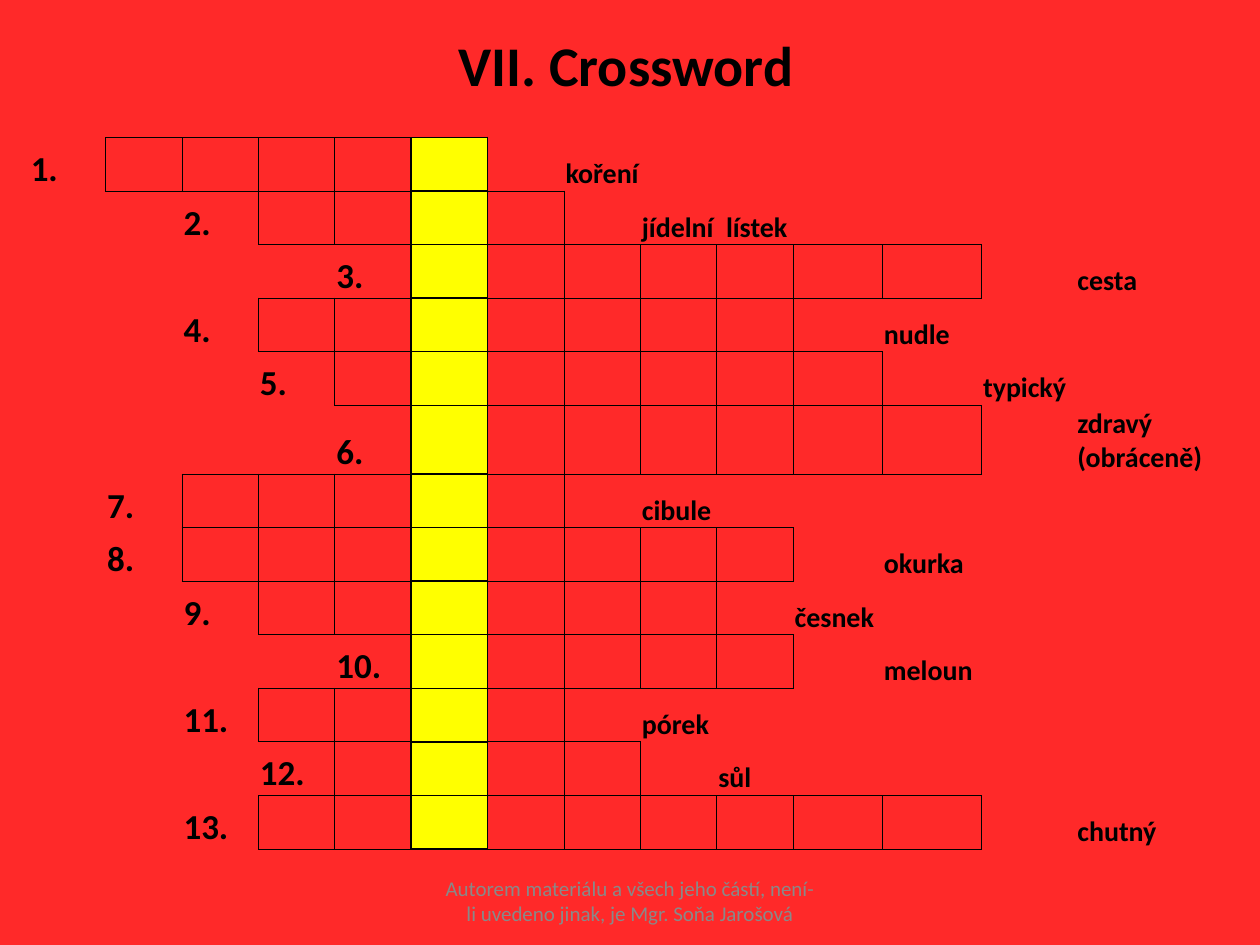
from dataclasses import dataclass

from lxml.etree import SubElement
from pptx import Presentation
from pptx.dml.color import RGBColor
from pptx.enum.text import MSO_ANCHOR, PP_ALIGN
from pptx.oxml.ns import qn
from pptx.util import Cm, Pt


@dataclass(frozen=True)
class Theme:
    font: str = "Calibri"
    background: str = "FF2929"
    ink: str = "000000"
    muted: str = "898989"
    highlight: str = "FFFF00"
    title: int = 32
    number: int = 20
    clue: int = 16
    footer: int = 12
    thin: float = 0.5
    thick: float = 1


theme = Theme()


def write_text(frame, text, size, color=theme.ink, bold=True, align=PP_ALIGN.LEFT):
    paragraph = frame.paragraphs[0]
    paragraph.alignment = align
    run = paragraph.add_run()
    run.text = text
    run.font.name = theme.font
    run.font.size = Pt(size)
    run.font.bold = bold
    run.font.color.rgb = RGBColor.from_string(color)


def draw_border(cell, side, width):
    line = SubElement(cell._tc.get_or_add_tcPr(), qn(f"a:ln{side}"), w=str(Pt(width)))
    if width:
        fill = SubElement(line, qn("a:solidFill"))
        SubElement(fill, qn("a:srgbClr"), val=theme.ink)
    else:
        SubElement(line, qn("a:noFill"))


presentation = Presentation()
presentation.slide_width = Cm(25.4)
presentation.slide_height = Cm(19.05)
slide = presentation.slides.add_slide(presentation.slide_layouts[6])
slide.background.fill.solid()
slide.background.fill.fore_color.rgb = RGBColor.from_string(theme.background)

captions = [
    ("VII. Crossword", (1.19, 0.58, 22.86, 1.42),
     dict(size=theme.title)),
    ("Autorem materiálu a všech jeho částí, není-li uvedeno jinak, je Mgr. Soňa Jarošová",
     (8.68, 17.65, 8.04, 1.02),
     dict(size=theme.footer, color=theme.muted, bold=False)),
]
for text, box, style in captions:
    frame = slide.shapes.add_textbox(*map(Cm, box)).text_frame
    frame.word_wrap = True
    frame.vertical_anchor = MSO_ANCHOR.MIDDLE
    write_text(frame, text, align=PP_ALIGN.CENTER, **style)

words = [
    (0, 5, "koření"),
    (2, 4, "jídelní  lístek"),
    (4, 7, "cesta"),
    (2, 7, "nudle"),
    (3, 7, "typický"),
    (4, 7, "zdravý (obráceně)"),
    (1, 5, "cibule"),
    (1, 8, "okurka"),
    (2, 6, "česnek"),
    (4, 5, "meloun"),
    (2, 4, "pórek"),
    (3, 4, "sůl"),
    (2, 9, "chutný"),
]
column_widths = [1.54] * 10 + [1.8, 2, 1.9, 3.17]
row_height = 1.08
solution_column = 5
neighbours = {"L": (0, -1), "R": (0, 1), "T": (-1, 0), "B": (1, 0)}

letters = {
    (row, number_column + offset)
    for row, (number_column, length, clue) in enumerate(words)
    for offset in range(1, length + 1)
}

table = slide.shapes.add_table(
    len(words), len(column_widths), Cm(0.59), Cm(2.77),
    Cm(sum(column_widths)), Cm(row_height * len(words)),
).table
table.first_row = False
table.horz_banding = False
for column, width in zip(table.columns, column_widths):
    column.width = Cm(width)

for row in range(len(words)):
    table.rows[row].height = Cm(row_height)
    for column in range(len(column_widths)):
        cell = table.cell(row, column)
        cell.margin_left = cell.margin_right = cell.margin_top = Cm(0.03)
        cell.margin_bottom = 0
        cell.vertical_anchor = MSO_ANCHOR.BOTTOM
        for side, (down, across) in neighbours.items():
            pair = {(row, column), (row + down, column + across)} & letters
            width = theme.thin if pair else 0
            if any(position[1] == solution_column for position in pair):
                width = theme.thick
            draw_border(cell, side, width)
        if column == solution_column:
            cell.fill.solid()
            cell.fill.fore_color.rgb = RGBColor.from_string(theme.highlight)
        else:
            cell.fill.background()

for row, (number_column, length, clue) in enumerate(words):
    clue_column = number_column + length + 2
    write_text(table.cell(row, number_column).text_frame, f"{row + 1}.", size=theme.number)
    write_text(table.cell(row, clue_column).text_frame, clue, size=theme.clue)

table.cell(1, 8).merge(table.cell(1, 9))

presentation.save("out.pptx")
